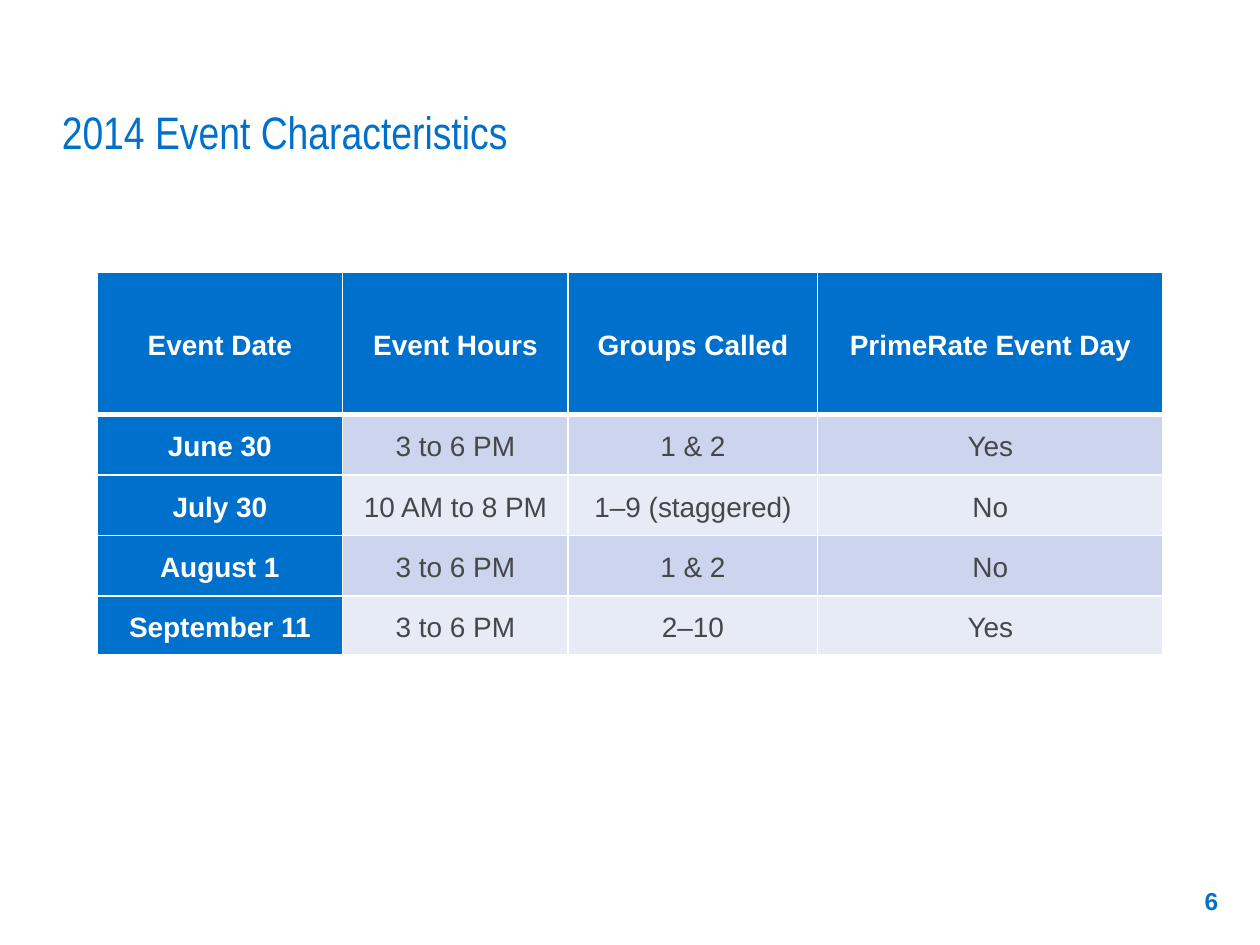
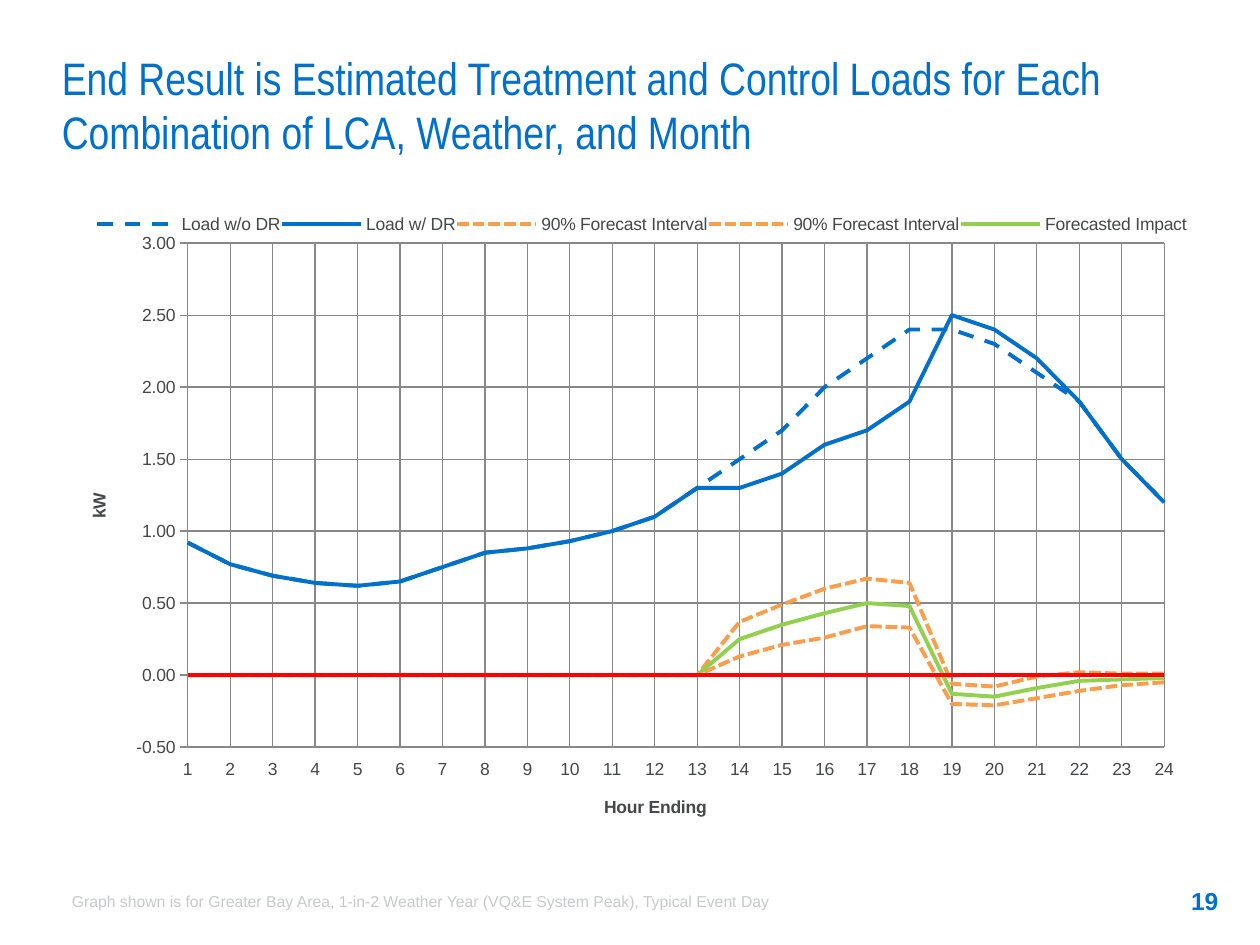
"""Build two slides: a table of 2014 events and a chart of hourly loads."""
from dataclasses import dataclass

from lxml.etree import SubElement
from pptx import Presentation
from pptx.chart.data import CategoryChartData
from pptx.dml.color import RGBColor
from pptx.enum.chart import (XL_CHART_TYPE, XL_LEGEND_POSITION as LegendSpot,
                             XL_TICK_LABEL_POSITION as LabelSpot, XL_TICK_MARK as Tick)
from pptx.enum.dml import MSO_LINE_DASH_STYLE as Dash
from pptx.enum.text import MSO_ANCHOR as Anchor, PP_ALIGN as Align
from pptx.oxml import parse_xml
from pptx.oxml.ns import nsdecls, qn
from pptx.util import Inches, Pt


@dataclass(frozen=True)
class Theme:
    """Colours, fonts and type sizes."""
    blue: str = "0070CD"
    ink: str = "464749"
    white: str = "FFFFFF"
    pale: str = "C7C9CB"
    bands: tuple = ("CCD5ED", "E7EBF6")
    orange: str = "FB9E4C"
    green: str = "92D050"
    red: str = "FF0000"
    grid: str = "888888"
    heading: str = "Arial Narrow"
    body: str = "Arial"
    title_size: int = 26
    table_size: int = 16
    page_size: int = 14
    chart_size: int = 10
    note_size: int = 9


THEME = Theme()
WIDTH, HEIGHT = 10, 7.5
LEFT, CONTENT_WIDTH = 0.49, 9.01
CHART_TOP, CHART_HEIGHT = 1.44, 5.26
FOOTER_TOP, FOOTER_HEIGHT = 6.95, 0.4
FOOTER_INSETS = (0.09, 0.04, 0.09, 0.04)

EVENT_TITLE, EVENT_PAGE = "2014 Event Characteristics", 6
EVENT_ROWS = [
    ("Event Date", "Event Hours", "Groups Called", "PrimeRate Event Day"),
    ("June 30", "3 to 6 PM", "1 & 2", "Yes"),
    ("July 30", "10 AM to 8 PM", "1–9 (staggered)", "No"),
    ("August 1", "3 to 6 PM", "1 & 2", "No"),
    ("September 11", "3 to 6 PM", "2–10", "Yes"),
]
COLUMN_WIDTHS = (1.95, 1.79, 1.98, 2.74)
ROW_HEIGHTS = (1.13, 0.48, 0.48, 0.48, 0.47)

LOAD_TITLE = ("End Result is Estimated Treatment and Control Loads for Each "
              "Combination of LCA, Weather, and Month")
LOAD_PAGE = 19
LOAD_NOTE = ("Graph shown is for Greater Bay Area, 1-in-2 Weather Year "
             "(VQ&E System Peak), Typical Event Day")
HOURS = range(1, 25)
MORNING = [0.92, 0.77, 0.69, 0.64, 0.62, 0.65, 0.75, 0.85, 0.88, 0.93, 1, 1.1, 1.3]
IDLE = [0] * len(MORNING)
LOADS = [
    ("Load w/o DR", THEME.blue, Dash.DASH,
     MORNING + [1.5, 1.7, 2, 2.2, 2.4, 2.4, 2.3, 2.1, 1.9, 1.5, 1.2]),
    ("Load w/ DR", THEME.blue, None,
     MORNING + [1.3, 1.4, 1.6, 1.7, 1.9, 2.5, 2.4, 2.2, 1.9, 1.5, 1.2]),
    ("90% Forecast Interval", THEME.orange, Dash.SQUARE_DOT,
     IDLE + [0.37, 0.49, 0.6, 0.67, 0.64, -0.06, -0.08, -0.01, 0.02, 0.01, 0.01]),
    ("90% Forecast Interval", THEME.orange, Dash.SQUARE_DOT,
     IDLE + [0.13, 0.21, 0.26, 0.34, 0.33, -0.2, -0.21, -0.16, -0.11, -0.07, -0.05]),
    ("Forecasted Impact", THEME.green, None,
     IDLE + [0.25, 0.35, 0.43, 0.5, 0.48, -0.13, -0.15, -0.09, -0.04, -0.03, -0.02]),
    ("Series 6", THEME.red, None, [0] * len(HOURS)),
]
ZERO_LINE = len(LOADS) - 1


def style_font(font, size, color, bold=False, name=THEME.body):
    """Set the face, size, colour and weight of a font."""
    font.name, font.size, font.bold = name, Pt(size), bold
    font.color.rgb = RGBColor.from_string(color)


def write(frame, text, *, size, color, bold=False, name=THEME.body,
          align=Align.LEFT, spacing=None):
    """Write one formatted paragraph into a text frame."""
    para = frame.paragraphs[0]
    para.alignment, para.line_spacing = align, spacing
    span = para.add_run()
    span.text = text
    style_font(span.font, size, color, bold, name)


def add_text(page, text, place, insets, anchor, **style):
    """Add a wrapping text box."""
    frame = page.shapes.add_textbox(*map(Inches, place)).text_frame
    frame.word_wrap, frame.vertical_anchor = True, anchor
    (frame.margin_left, frame.margin_top,
     frame.margin_right, frame.margin_bottom) = map(Inches, insets)
    write(frame, text, **style)


def add_page(deck, title, number):
    """Add a blank slide with its title and page number."""
    page = deck.slides.add_slide(deck.slide_layouts[6])
    add_text(page, title, (LEFT, 0.57, CONTENT_WIDTH, 0.74), (0, 0.05, 0.1, 0.05),
             Anchor.BOTTOM, size=THEME.title_size, color=THEME.blue, name=THEME.heading)
    add_text(page, str(number), (9.06, FOOTER_TOP, 0.7, FOOTER_HEIGHT), FOOTER_INSETS,
             Anchor.MIDDLE, size=THEME.page_size, color=THEME.blue, bold=True,
             align=Align.RIGHT)
    return page


def add_borders(cell, widths):
    """Draw white borders on the left, right, top and bottom of a cell."""
    properties = cell._tc.get_or_add_tcPr()
    for side, width in zip("LRTB", widths):
        line = SubElement(properties, qn(f"a:ln{side}"), w=str(Pt(width)))
        SubElement(SubElement(line, qn("a:solidFill")), qn("a:srgbClr"), val=THEME.white)


def add_event_table(page):
    """Add the table of events."""
    table = page.shapes.add_table(
        len(EVENT_ROWS), len(COLUMN_WIDTHS), Inches(0.77), Inches(2.16),
        Inches(sum(COLUMN_WIDTHS)), Inches(sum(ROW_HEIGHTS))).table
    for column, width in zip(table.columns, COLUMN_WIDTHS):
        column.width = Inches(width)
    for r, (row, height) in enumerate(zip(EVENT_ROWS, ROW_HEIGHTS)):
        table.rows[r].height = Inches(height)
        for c, text in enumerate(row):
            cell = table.cell(r, c)
            heading = r == 0 or c == 0
            add_borders(cell, (1, 1, 3 if r == 1 else 1, 3 if r == 0 else 1))
            cell.fill.solid()
            cell.fill.fore_color.rgb = RGBColor.from_string(
                THEME.blue if heading else THEME.bands[(r - 1) % 2])
            cell.vertical_anchor = Anchor.MIDDLE
            cell.margin_left = cell.margin_right = Inches(0.07)
            cell.margin_top = cell.margin_bottom = 0
            write(cell.text_frame, text, size=THEME.table_size, bold=heading,
                  color=THEME.white if heading else THEME.ink,
                  align=Align.CENTER, spacing=1.15)


def set_layout(part, inner=False, **inches):
    """Place a chart part, in inches from the chart's top left corner."""
    for old in part.findall(qn("c:layout")):
        part.remove(old)
    extent = {"x": CONTENT_WIDTH, "w": CONTENT_WIDTH, "y": CHART_HEIGHT, "h": CHART_HEIGHT}
    target = '<c:layoutTarget val="inner"/>' if inner else ""
    modes = "".join(f'<c:{key}Mode val="edge"/>' for key in "xy")
    values = "".join(f'<c:{key} val="{length / extent[key]:.4f}"/>'
                     for key, length in inches.items())
    layout = parse_xml(f'<c:layout {nsdecls("c")}><c:manualLayout>{target}{modes}{values}'
                       '</c:manualLayout></c:layout>')
    overlay = part.find(qn("c:overlay"))
    if overlay is None:
        part.insert(0, layout)
    else:
        overlay.addprevious(layout)


def style_axis(axis, title, x, y):
    """Format an axis, its grid and its title."""
    axis.has_major_gridlines = True
    axis.major_tick_mark, axis.minor_tick_mark = Tick.OUTSIDE, Tick.NONE
    for line in (axis.format.line, axis.major_gridlines.format.line):
        line.width = Pt(0.75)
        line.color.rgb = RGBColor.from_string(THEME.grid)
    style_font(axis.tick_labels.font, THEME.chart_size, THEME.ink)
    write(axis.axis_title.text_frame, title, size=THEME.chart_size, color=THEME.ink,
          bold=True, align=None)
    set_layout(axis.axis_title._element, x=x, y=y)


def add_load_chart(page):
    """Add the line chart of hourly loads."""
    data = CategoryChartData(number_format="0.00")
    data.categories = [str(hour) for hour in HOURS]
    for name, _, _, values in LOADS:
        data.add_series(name, values)
    chart = page.shapes.add_chart(
        XL_CHART_TYPE.LINE, Inches(LEFT), Inches(CHART_TOP), Inches(CONTENT_WIDTH),
        Inches(CHART_HEIGHT), data).chart
    chart.has_title = False
    style_font(chart.font, THEME.chart_size, THEME.ink)
    set_layout(chart._chartSpace.chart.plotArea, inner=True, x=1, y=0.49, w=7.75, h=4)
    for series, (_, color, dash, _) in zip(chart.plots[0].series, LOADS):
        series.smooth = False
        line = series.format.line
        line.width = Pt(2.25)
        line.color.rgb = RGBColor.from_string(color)
        if dash:
            line.dash_style = dash

    hours, power = chart.category_axis, chart.value_axis
    style_axis(hours, "Hour Ending", 4.28, 4.85)
    style_axis(power, "kW", 0.18, 2.45)
    hours.tick_label_position = LabelSpot.LOW
    power.minimum_scale, power.maximum_scale, power.major_unit = -0.5, 3, 0.5
    power.tick_labels.number_format = "0.00"
    power.tick_labels.number_format_is_linked = False
    turn = power.axis_title.text_frame._txBody.find(qn("a:bodyPr"))
    turn.set("rot", "-5400000")
    turn.set("vert", "horz")
    scale = power._element
    for old in scale.findall(qn("c:crossBetween")):
        scale.remove(old)
    scale.find(qn("c:crosses")).addnext(
        parse_xml(f'<c:crossBetween {nsdecls("c")} val="midCat"/>'))

    chart.has_legend = True
    legend = chart.legend
    legend.position, legend.include_in_layout = LegendSpot.TOP, False
    style_font(legend.font, THEME.chart_size, THEME.ink)
    set_layout(legend._element, x=0.27, y=0.21, w=8.67, h=0.26)
    legend._element.find(qn("c:legendPos")).addnext(parse_xml(
        f'<c:legendEntry {nsdecls("c")}><c:idx val="{ZERO_LINE}"/>'
        '<c:delete val="1"/></c:legendEntry>'))


def main():
    """Build and save the deck."""
    deck = Presentation()
    deck.slide_width, deck.slide_height = Inches(WIDTH), Inches(HEIGHT)
    add_event_table(add_page(deck, EVENT_TITLE, EVENT_PAGE))
    page = add_page(deck, LOAD_TITLE, LOAD_PAGE)
    add_text(page, LOAD_NOTE, (0.48, FOOTER_TOP, 8.44, FOOTER_HEIGHT), FOOTER_INSETS,
             Anchor.MIDDLE, size=THEME.note_size, color=THEME.pale)
    add_load_chart(page)
    deck.save("out.pptx")


if __name__ == "__main__":
    main()
